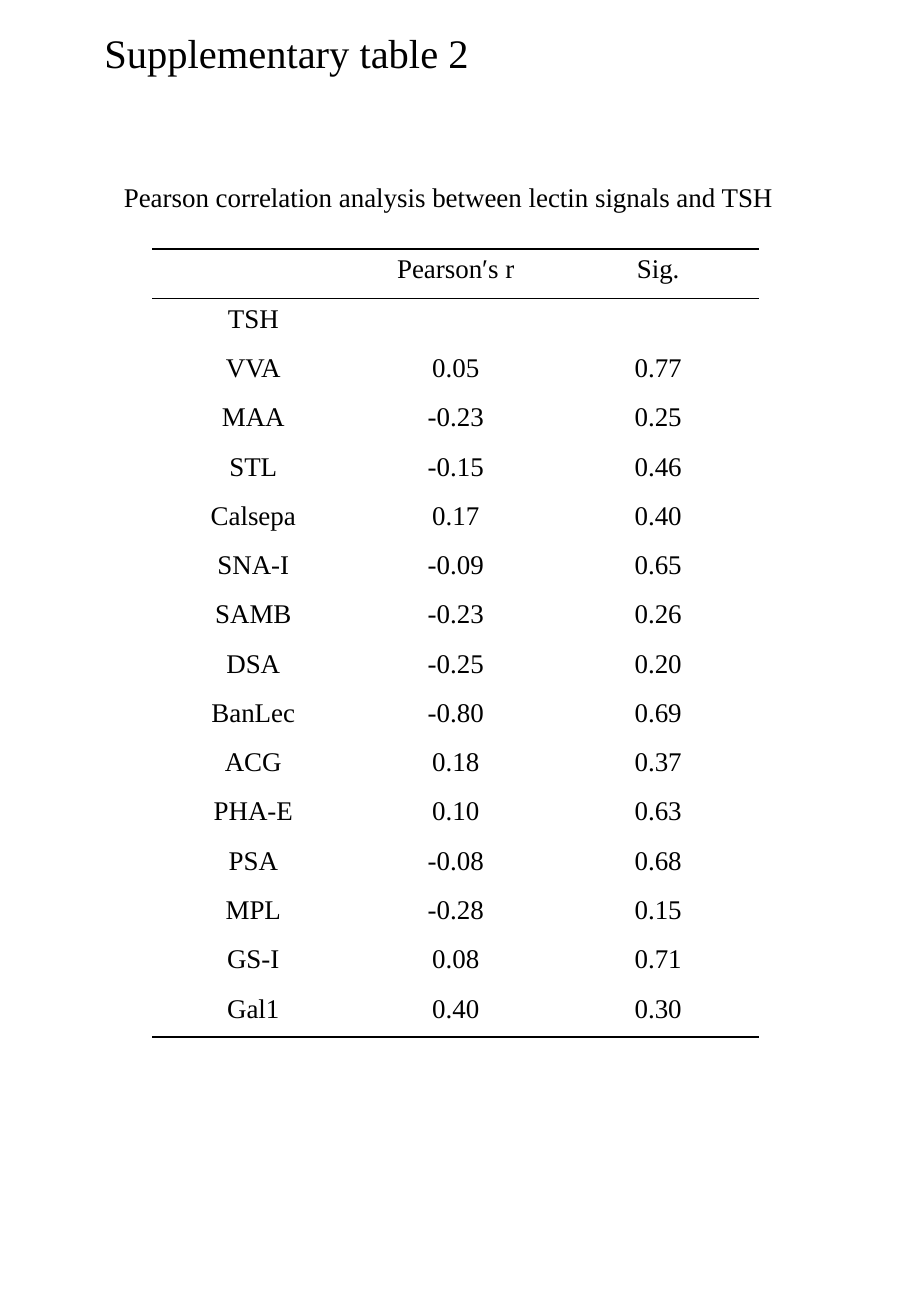
from dataclasses import dataclass

from lxml import etree
from pptx import Presentation
from pptx.dml.color import RGBColor
from pptx.enum import text
from pptx.oxml import ns
from pptx.util import Cm, Pt


@dataclass(frozen=True)
class Theme:
    font: str = "Times New Roman"
    ink: str = "000000"
    title_size: int = 24
    body_size: int = 16
    thick_rule: float = 1.5
    thin_rule: float = 0.5


THEME = Theme()
TITLE_ONLY_LAYOUT = 5
ROW_HEIGHT = Cm(1.03)
TABLE_WIDTH = Cm(12.7)
HEADINGS = ("", "Pearson′s r", "Sig.")
CORRELATIONS = (
    ("TSH", "", ""),
    ("VVA", "0.05", "0.77"),
    ("MAA", "-0.23", "0.25"),
    ("STL", "-0.15", "0.46"),
    ("Calsepa", "0.17", "0.40"),
    ("SNA-I", "-0.09", "0.65"),
    ("SAMB", "-0.23", "0.26"),
    ("DSA", "-0.25", "0.20"),
    ("BanLec", "-0.80", "0.69"),
    ("ACG", "0.18", "0.37"),
    ("PHA-E", "0.10", "0.63"),
    ("PSA", "-0.08", "0.68"),
    ("MPL", "-0.28", "0.15"),
    ("GS-I", "0.08", "0.71"),
    ("Gal1", "0.40", "0.30"),
)


def write(frame, words, size, align):
    frame.text = words
    para = frame.paragraphs[0]
    para.alignment = align
    para.font.name = THEME.font
    para.font.size = Pt(size)
    para.font.color.rgb = RGBColor.from_string(THEME.ink)


def format_line(box, words, size, left, top, width, height):
    """Place a text shape and fill it with one left-aligned line."""
    box.left, box.top, box.width, box.height = left, top, width, height
    frame = box.text_frame
    frame.word_wrap = True
    frame.auto_size = text.MSO_AUTO_SIZE.NONE
    frame.vertical_anchor = text.MSO_ANCHOR.TOP
    write(frame, words, size, text.PP_ALIGN.LEFT)


def set_borders(cell, top, bottom):
    """Rule the cell above and below; a width of 0 leaves that side bare."""
    properties = cell._tc.get_or_add_tcPr()
    widths = {"L": 0, "R": 0, "T": top, "B": bottom}
    for position, (side, width) in enumerate(widths.items()):
        line = etree.Element(ns.qn(f"a:ln{side}"), w=str(Pt(width)))
        if width:
            fill = etree.SubElement(line, ns.qn("a:solidFill"))
            etree.SubElement(fill, ns.qn("a:srgbClr"), val=THEME.ink)
        else:
            etree.SubElement(line, ns.qn("a:noFill"))
        properties.insert(position, line)


def add_ruled_table(slide, rows, left, top):
    """Add a table with rules only around its heading and at its foot."""
    table = slide.shapes.add_table(
        len(rows), len(rows[0]), left, top, TABLE_WIDTH, ROW_HEIGHT * len(rows)
    ).table
    table.first_row = table.horz_banding = False
    last = len(rows) - 1
    rules_above = {0: THEME.thick_rule, 1: THEME.thin_rule}
    rules_below = {0: THEME.thin_rule, last: THEME.thick_rule}
    for index, values in enumerate(rows):
        for column, value in enumerate(values):
            cell = table.cell(index, column)
            write(cell.text_frame, value, THEME.body_size, text.PP_ALIGN.CENTER)
            cell.fill.background()
            set_borders(cell, rules_above.get(index, 0), rules_below.get(index, 0))


def main():
    deck = Presentation()
    deck.slide_width, deck.slide_height = Cm(19.05), Cm(27.51)
    slide = deck.slides.add_slide(deck.slide_layouts[TITLE_ONLY_LAYOUT])

    format_line(slide.shapes.title, "Supplementary table 2", THEME.title_size,
                Cm(1.93), Cm(0.46), Cm(9.93), Cm(1.27))
    add_ruled_table(slide, (HEADINGS, *CORRELATIONS), Cm(3.18), Cm(5.2))
    caption = slide.shapes.add_textbox(0, 0, 0, 0)
    format_line(caption, "Pearson correlation analysis between lectin signals and TSH",
                THEME.body_size, Cm(2.34), Cm(3.66), Cm(14.99), Cm(0.94))

    deck.save("out.pptx")


if __name__ == "__main__":
    main()
